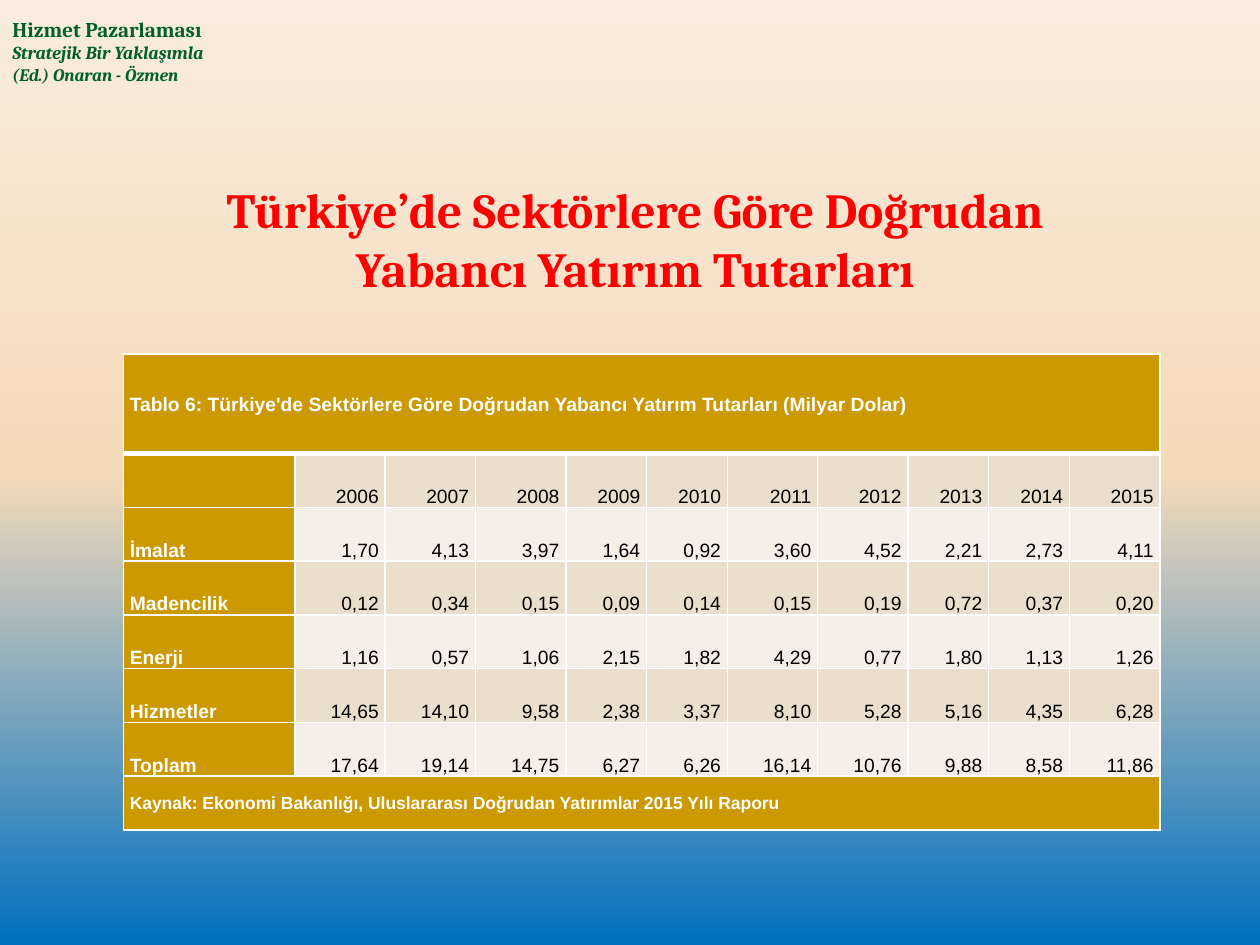
from copy import deepcopy
from dataclasses import dataclass

from lxml import etree
from pptx import Presentation
from pptx.dml.color import RGBColor
from pptx.enum.text import MSO_ANCHOR, PP_ALIGN
from pptx.oxml.ns import qn
from pptx.slide import Slide
from pptx.util import Inches, Pt

LEFT, CENTER, RIGHT = PP_ALIGN.LEFT, PP_ALIGN.CENTER, PP_ALIGN.RIGHT
TOP, MIDDLE, BOTTOM = MSO_ANCHOR.TOP, MSO_ANCHOR.MIDDLE, MSO_ANCHOR.BOTTOM

BLUE = RGBColor(0x00, 0x70, 0xC0)
PEACH = RGBColor(0xF5, 0xDA, 0xBA)
CREAM = RGBColor(0xF9, 0xEC, 0xDE)
GREEN = RGBColor(0x00, 0x60, 0x2B)
RED = RGBColor(0xFF, 0x00, 0x00)
GOLD = RGBColor(0xCC, 0x99, 0x00)
SAND = RGBColor(0xEC, 0xDE, 0xCC)
PALE = RGBColor(0xF6, 0xEF, 0xE7)
WHITE = RGBColor(0xFF, 0xFF, 0xFF)
BLACK = RGBColor(0x00, 0x00, 0x00)

# The slide is a grid of 100 columns by 75 rows of square units
WIDTH, HEIGHT = Inches(10), Inches(7.5)
UNIT = WIDTH // 100


@dataclass(frozen=True)
class Line:
    text: str
    size: float
    italic: bool = False


@dataclass(frozen=True)
class Block:
    left: float
    top: float
    width: float
    height: float
    lines: tuple[Line, ...]
    color: RGBColor
    align: PP_ALIGN = LEFT
    anchor: MSO_ANCHOR = TOP


@dataclass(frozen=True)
class Look:
    fill: RGBColor
    color: RGBColor
    bold: bool
    align: PP_ALIGN = LEFT
    anchor: MSO_ANCHOR = BOTTOM
    size: float = 11


BLOCKS = (
    Block(0, 0.8, 28.1, 6.5, (
        Line("Hizmet Pazarlaması", 12),
        Line("Stratejik Bir Yaklaşımla", 10.5, True),
        Line("(Ed.) Onaran - Özmen", 10, True),
    ), GREEN),
    Block(13.3, 11, 74.2, 13.1, (
        Line("Türkiye’de Sektörlere Göre Doğrudan Yabancı Yatırım Tutarları", 28),
    ), RED, CENTER, BOTTOM),
)

HEAD = "Tablo 6: Türkiye'de Sektörlere Göre Doğrudan Yabancı Yatırım Tutarları (Milyar Dolar)"
FOOT = "Kaynak: Ekonomi Bakanlığı, Uluslararası Doğrudan Yatırımlar 2015 Yılı Raporu"
SECTORS = {
    "": "2006 2007 2008 2009 2010 2011 2012 2013 2014 2015",
    "İmalat": "1,70 4,13 3,97 1,64 0,92 3,60 4,52 2,21 2,73 4,11",
    "Madencilik": "0,12 0,34 0,15 0,09 0,14 0,15 0,19 0,72 0,37 0,20",
    "Enerji": "1,16 0,57 1,06 2,15 1,82 4,29 0,77 1,80 1,13 1,26",
    "Hizmetler": "14,65 14,10 9,58 2,38 3,37 8,10 5,28 5,16 4,35 6,28",
    "Toplam": "17,64 19,14 14,75 6,27 6,26 16,14 10,76 9,88 8,58 11,86",
}
WIDE, SLIM = 7.17, 6.41
COLS = (13.6, WIDE, WIDE, WIDE, SLIM, SLIM, WIDE, WIDE, SLIM, SLIM, WIDE)
ROWS = (7.9,) + (4.27,) * (len(SECTORS) + 1)


def units(count: float) -> int:
    return round(count * UNIT)


def paint_back(slide: Slide) -> None:
    fill = slide.background.fill
    fill.gradient()
    fill.gradient_angle = 90
    stops = slide.element.xpath(".//a:gsLst")[0]
    stops.insert(1, deepcopy(stops[0]))
    for stop, place, color in zip(fill.gradient_stops, (0, 0.5, 1), (BLUE, PEACH, CREAM)):
        stop.position = place
        stop.color.rgb = color


def add_block(slide: Slide, block: Block) -> None:
    box = slide.shapes.add_textbox(
        *map(units, (block.left, block.top, block.width, block.height)))
    frame = box.text_frame
    frame.word_wrap = True
    frame.vertical_anchor = block.anchor
    frame.text = "\n".join(line.text for line in block.lines)
    for para, line in zip(frame.paragraphs, block.lines):
        para.alignment = block.align
        font = para.runs[0].font
        font.name, font.size, font.bold = "Cambria", Pt(line.size), True
        font.italic = line.italic
        font.color.rgb = block.color


def add_edge(cell, side: str, points: float) -> None:
    props = cell._tc.get_or_add_tcPr()
    edge = etree.SubElement(props, qn(f"a:ln{side}"), w=str(Pt(points)))
    paint = etree.SubElement(edge, qn("a:solidFill"))
    etree.SubElement(paint, qn("a:srgbClr"), val=str(WHITE))


def style_cell(cell, text: str, look: Look, row: int) -> None:
    cell.margin_left = cell.margin_right = Inches(0.05)
    cell.margin_top = cell.margin_bottom = 0
    cell.vertical_anchor = look.anchor
    # Edges come before the fill; the rule under the heading is thicker
    for side in "LRTB":
        thick = (row, side) in ((0, "B"), (1, "T"))
        add_edge(cell, side, 3 if thick else 1)
    cell.fill.solid()
    cell.fill.fore_color.rgb = look.fill
    cell.text_frame.text = text
    para = cell.text_frame.paragraphs[0]
    para.alignment = look.align
    para.line_spacing = 1.07
    font = para.runs[0].font if para.runs else para.font
    font.name, font.size, font.bold = "Arial", Pt(look.size), look.bold
    font.color.rgb = look.color


def add_grid(slide: Slide) -> None:
    table = slide.shapes.add_table(
        len(ROWS), len(COLS), units(9.8), units(28.1),
        units(sum(COLS)), units(sum(ROWS))).table
    table.first_row = table.horz_banding = False
    for col, width in zip(table.columns, COLS):
        col.width = units(width)
    for row, height in zip(table.rows, ROWS):
        row.height = units(height)

    # Heading and source rows run the full width
    last = len(ROWS) - 1
    for row, text, size in ((0, HEAD, 11), (last, FOOT, 10)):
        table.cell(row, 0).merge(table.cell(row, len(COLS) - 1))
        look = Look(GOLD, WHITE, True, anchor=MIDDLE, size=size)
        for col in range(len(COLS)):
            style_cell(table.cell(row, col), "" if col else text, look, row)

    # Sector names, then figures on banded rows
    for row, (name, values) in enumerate(SECTORS.items(), 1):
        style_cell(table.cell(row, 0), name, Look(GOLD, WHITE, True), row)
        look = Look(SAND if row % 2 else PALE, BLACK, False, RIGHT)
        for col, value in enumerate(values.split(), 1):
            style_cell(table.cell(row, col), value, look, row)


def main() -> None:
    deck = Presentation()
    deck.slide_width, deck.slide_height = WIDTH, HEIGHT
    slide = deck.slides.add_slide(deck.slide_layouts[6])
    paint_back(slide)
    for block in BLOCKS:
        add_block(slide, block)
    add_grid(slide)
    deck.save("out.pptx")


if __name__ == "__main__":
    main()
